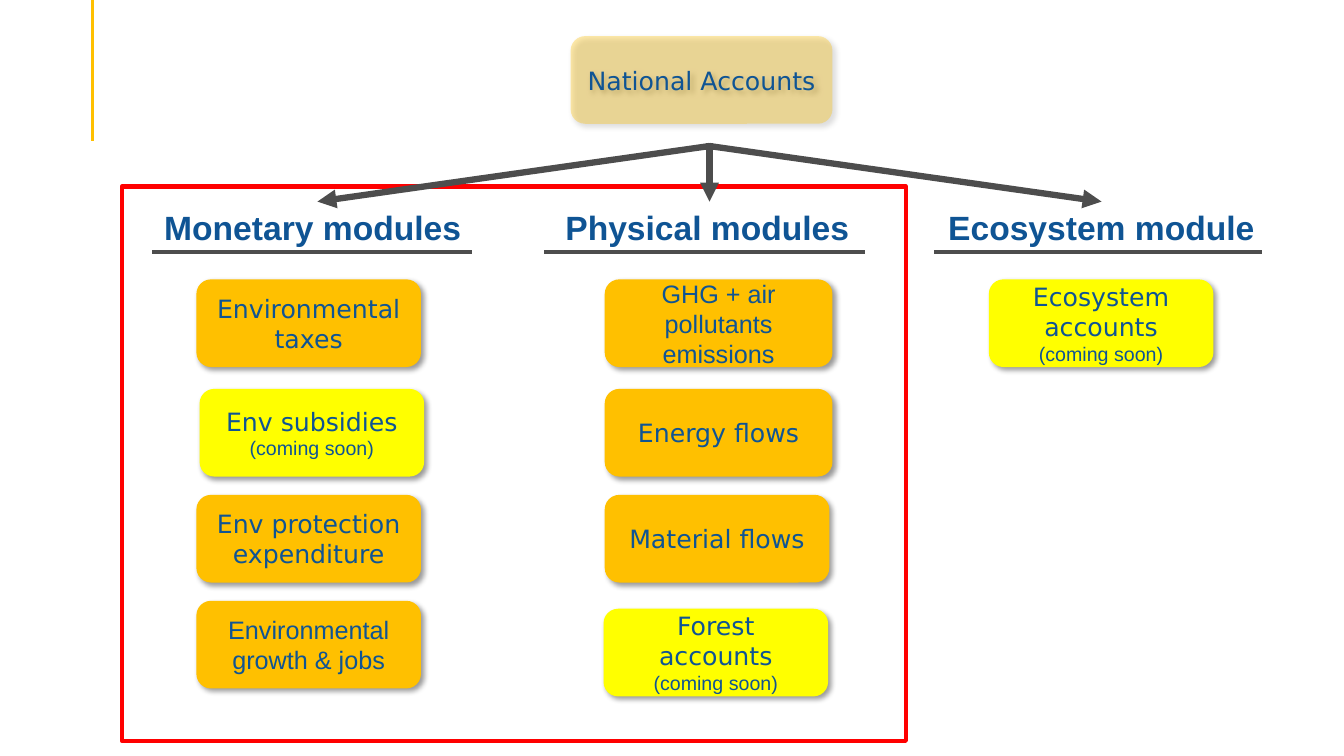
from lxml import etree
from pptx import Presentation
from pptx.dml.color import RGBColor
from pptx.enum import shapes, text
from pptx.oxml import parse_xml
from pptx.oxml.ns import nsdecls, qn
from pptx.util import Cm, Pt

BLUE, GREY, ORANGE, YELLOW, RED = "0F5494", "4D4D4D", "FFC000", "FFFF00", "FF0000"
SANS, ARIAL = "DejaVu Sans", "Arial"
BOX_HEIGHT = 2.21
ROWS = [7.04, 9.8, 12.47, 15.14]
SOON = "(coming soon)"

# label, font, left, top, width, coming soon
MODULES = [
    ("Energy flows", SANS, 15.24, ROWS[1], 5.74, False),
    ("Material flows", SANS, 15.24, ROWS[2], 5.66, False),
    ("GHG + air pollutants emissions", ARIAL, 15.24, ROWS[0], 5.74, False),
    ("Environmental growth & jobs", ARIAL, 4.95, ROWS[3], 5.66, False),
    ("Env protection expenditure", SANS, 4.95, ROWS[2], 5.66, False),
    ("Environmental taxes", SANS, 4.95, ROWS[0], 5.66, False),
    ("Env subsidies", SANS, 5.03, ROWS[1], 5.66, True),
    ("Forest accounts", SANS, 15.21, 15.34, 5.66, True),
    ("Ecosystem accounts", SANS, 24.92, ROWS[0], 5.66, True),
]

# label, left, width, wraps, underline start, underline end
HEADINGS = [
    ("Physical modules", 13.34, 8.97, True, 13.72, 21.79),
    ("Monetary modules", 3.84, 8.08, False, 3.84, 11.89),
    ("Ecosystem module", 23.27, 8.97, True, 23.55, 31.8),
]


def colour(value):
    return RGBColor.from_string(value)


def write(para, wording, font, size, bold=False):
    para.text = wording
    para.alignment = text.PP_ALIGN.CENTER
    para.font.name = font
    para.font.size = Pt(size)
    para.font.bold = bold
    para.font.color.rgb = colour(BLUE)


def add_shadow(shape):
    shape._element.spPr.append(parse_xml(
        f'<a:effectLst {nsdecls("a")}>'
        f'<a:outerShdw blurRad="{Pt(4)}" dist="{Pt(3)}" dir="2700000" algn="tl" rotWithShape="0">'
        '<a:srgbClr val="000000"><a:alpha val="40000"/></a:srgbClr>'
        '</a:outerShdw></a:effectLst>'))


def add_box(page, label, font, left, top, width, soon=False, opacity=100):
    box = page.shapes.add_shape(shapes.MSO_SHAPE.ROUNDED_RECTANGLE,
                                Cm(left), Cm(top), Cm(width), Cm(BOX_HEIGHT))
    box.fill.solid()
    box.fill.fore_color.rgb = colour(YELLOW if soon else ORANGE)
    if opacity < 100:
        fill = box._element.spPr.find(qn("a:solidFill"))
        etree.SubElement(fill[0], qn("a:alpha")).set("val", str(opacity * 1000))
    box.line.fill.background()
    add_shadow(box)
    frame = box.text_frame
    frame.word_wrap = True
    frame.vertical_anchor = text.MSO_ANCHOR.MIDDLE
    write(frame.paragraphs[0], label, font, 18)
    if soon:
        write(frame.add_paragraph(), SOON, ARIAL, 14)


def add_heading(page, label, left, width, wraps):
    box = page.shapes.add_textbox(Cm(left), Cm(5.08), Cm(width), Cm(1.27))
    box.text_frame.word_wrap = wraps
    box.text_frame.auto_size = text.MSO_AUTO_SIZE.SHAPE_TO_FIT_TEXT
    write(box.text_frame.paragraphs[0], label, ARIAL, 24, bold=True)


def add_line(page, start, end, value, weight, arrow=False):
    line = page.shapes.add_connector(shapes.MSO_CONNECTOR.STRAIGHT,
                                     *map(Cm, start), *map(Cm, end))
    line.line.color.rgb = colour(value)
    line.line.width = Pt(weight)
    if arrow:
        etree.SubElement(line.line._get_or_add_ln(), qn("a:tailEnd")).set("type", "triangle")
    etree.SubElement(line._element.spPr, qn("a:effectLst"))


def add_frame(page, left, top, width, height):
    frame = page.shapes.add_shape(shapes.MSO_SHAPE.RECTANGLE,
                                  Cm(left), Cm(top), Cm(width), Cm(height))
    frame.shadow.inherit = False
    frame.fill.background()
    frame.line.color.rgb = colour(RED)
    frame.line.width = Pt(3)


def main():
    deck = Presentation()
    deck.slide_width, deck.slide_height = Cm(33.87), Cm(19.05)
    page = deck.slides.add_slide(deck.slide_layouts[6])

    add_line(page, (2.34, 0), (2.34, 3.56), ORANGE, 2.25)
    add_box(page, "National Accounts", SANS, 14.38, 0.91, 6.6, opacity=33)
    for module in MODULES:
        add_box(page, *module)
    for label, left, width, wraps, start, end in HEADINGS:
        add_heading(page, label, left, width, wraps)
        add_line(page, (start, 6.35), (end, 6.35), GREY, 3)
    add_frame(page, 3.07, 4.7, 19.76, 13.97)
    for top, target in [(3.61, 17.88), (3.68, 27.76), (3.68, 8)]:
        add_line(page, (17.88, top), (target, 5.08), GREY, 4.5, arrow=True)

    deck.save("out.pptx")


if __name__ == "__main__":
    main()
